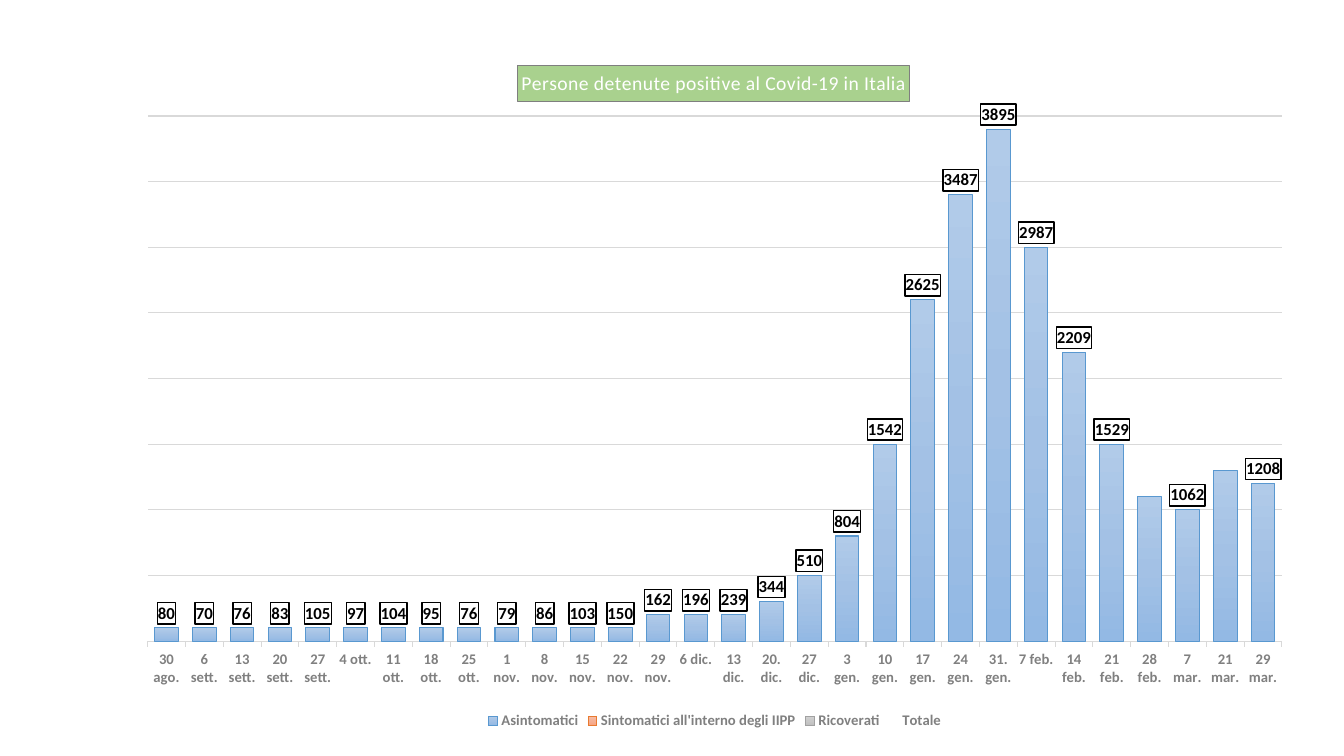
import pptx
import pptx.chart.data
import pptx.dml.color
import pptx.enum.chart
import pptx.oxml
import pptx.oxml.ns
import pptx.util

SLIDE_WIDTH, SLIDE_HEIGHT = 13.33, 7.5
FONT = "Calibri"
COLORS = {
    "text": "000000", "axis": "808080", "grid": "D9D9D9", "white": "FFFFFF",
    "title_fill": "A9D18E", "title_line": "7F7F7F",
}
TITLE = "Persone detenute positive al Covid-19 in Italia"
DATES = (
    "30 ago.|6 sett.|13 sett.|20 sett.|27 sett.|4 ott.|11 ott.|18 ott.|25 ott.|1 nov.|"
    "8 nov.|15 nov.|22 nov.|29 nov.|6 dic.|13 dic.|20. dic.|27 dic.|3 gen.|10 gen.|"
    "17 gen.|24 gen.|31. gen.|7 feb.|14 feb.|21 feb.|28 feb.|7 mar.|21 mar.|29 mar."
).split("|")
TOTALS = [80, 70, 76, 83, 105, 97, 104, 95, 76, 79, 86, 103, 150, 162, 196,
          239, 344, 510, 804, 1542, 2625, 3487, 3895, 2987, 2209, 1529, 1160,
          1062, 1341, 1208]
# Only the totals are labelled; the stacked parts are known to the nearest hundred
ASYMPTOMATIC = [100] * 13 + [200] * 3 + [
    300, 500, 800, 1500, 2600, 3400, 3900, 3000, 2200, 1500, 1100, 1000, 1300, 1200]
NEAR_ZERO = [0] * len(DATES)
UNLABELLED = [DATES.index("28 feb."), DATES.index("21 mar.")]

# name, values, gradient stops from top to bottom, outline
STACK = [
    ("Asintomatici", ASYMPTOMATIC, ("B1CBE9", "A3C1E5", "93B9E4"), "5998D0"),
    ("Sintomatici all'interno degli IIPP", NEAR_ZERO,
     ("F7BDA5", "F5B196", "F8A582"), "E87A30"),
    ("Ricoverati", NEAR_ZERO, ("D2D2D2", "C8C8C8", "C0C0C0"), "A1A1A1"),
]


def rgb(value):
    return pptx.dml.color.RGBColor.from_string(value)


def xml(markup):
    """Parse one element, declaring the drawing and chart namespaces."""
    tag, rest = markup[1:].split(">", 1)
    return pptx.oxml.parse_xml(f"<{tag} {pptx.oxml.ns.nsdecls('a', 'c')}>{rest}")


def style_font(font, size, color, bold=False):
    font.name, font.size, font.bold = FONT, pptx.util.Pt(size), bold
    font.color.rgb = rgb(color)


def write_text(frame, text, spacing=0, **style):
    frame.text = text
    run = frame.paragraphs[0].runs[0]
    style_font(run.font, **style)
    run.font._element.set("spc", str(spacing))


def style_line(line, color, width=0.75):
    line.color.rgb = rgb(color)
    line.width = pptx.util.Pt(width)


def manual_layout(inner=False, **shares):
    """Place a chart part by shares of the chart's size."""
    target = '<c:layoutTarget val="inner"/>' if inner else ""
    modes = '<c:xMode val="edge"/><c:yMode val="edge"/>'
    places = "".join(f'<c:{key} val="{share}"/>' for key, share in shares.items())
    return xml(f"<c:layout><c:manualLayout>{target}{modes}{places}"
               "</c:manualLayout></c:layout>")


def add_title(chart):
    title = chart.chart_title
    write_text(title.text_frame, TITLE, spacing=20, size=14, color=COLORS["white"])
    title.include_in_layout = False
    title.format.fill.solid()
    title.format.fill.fore_color.rgb = rgb(COLORS["title_fill"])
    style_line(title.format.line, COLORS["title_line"])
    for layout in title._element.findall(pptx.oxml.ns.qn("c:layout")):
        title._element.remove(layout)
    title._element.find(pptx.oxml.ns.qn("c:tx")).addnext(
        manual_layout(x=1 / 3, y=0.2 / SLIDE_HEIGHT))


def style_axes(chart):
    dates = chart.category_axis
    dates.major_tick_mark = pptx.enum.chart.XL_TICK_MARK.OUTSIDE
    style_font(dates.tick_labels.font, 10.5, COLORS["axis"], bold=True)
    style_line(dates.format.line, COLORS["grid"])
    counts = chart.value_axis
    counts.minimum_scale, counts.maximum_scale, counts.major_unit = 0, 4000, 500
    counts.has_major_gridlines = True
    style_line(counts.major_gridlines.format.line, COLORS["grid"])
    counts.visible = False


def style_stack_series(series, stops, outline):
    marks = "".join(f'<a:gs pos="{position * 50000}"><a:srgbClr val="{color}"/></a:gs>'
                    for position, color in enumerate(stops))
    series._element.get_or_add_spPr().insert(0, xml(
        f'<a:gradFill><a:gsLst>{marks}</a:gsLst>'
        '<a:lin ang="5400000" scaled="0"/></a:gradFill>'))
    style_line(series.format.line, outline)


def style_total_series(series):
    """Unfilled bars on top of the stack carry the boxed totals."""
    series.format.fill.background()
    series.format.line.fill.background()
    labels = series.data_labels
    labels.show_value = True
    labels.position = pptx.enum.chart.XL_LABEL_POSITION.INSIDE_BASE
    style_font(labels.font, 12, COLORS["text"], bold=True)
    element = labels._element
    element.find(pptx.oxml.ns.qn("c:txPr")).addprevious(xml(
        f'<c:spPr><a:solidFill><a:srgbClr val="{COLORS["white"]}"/></a:solidFill>'
        f'<a:ln w="12700"><a:solidFill><a:srgbClr val="{COLORS["text"]}"/>'
        '</a:solidFill></a:ln></c:spPr>'))
    for place, index in enumerate(UNLABELLED):
        element.insert(place, xml(
            f'<c:dLbl><c:idx val="{index}"/><c:delete val="1"/></c:dLbl>'))


def add_legend(chart):
    chart.has_legend = True
    chart.legend.position = pptx.enum.chart.XL_LEGEND_POSITION.BOTTOM
    chart.legend.include_in_layout = False
    style_font(chart.legend.font, 10.5, COLORS["axis"], bold=True)


def add_cases_chart(slide, left, top, width, height):
    data = pptx.chart.data.CategoryChartData()
    data.categories = DATES
    for name, values, _, _ in STACK:
        data.add_series(name, values)
    data.add_series("Totale", TOTALS)
    box = [pptx.util.Inches(share * side) for share, side in zip(
        (left, top, width, height), (SLIDE_WIDTH, SLIDE_HEIGHT) * 2)]
    chart = slide.shapes.add_chart(
        pptx.enum.chart.XL_CHART_TYPE.COLUMN_STACKED, *box, data).chart
    style_font(chart.font, 10, COLORS["text"])
    add_title(chart)
    style_axes(chart)
    add_legend(chart)

    # Columns
    plot = chart.plots[0]
    plot.gap_width, plot.overlap, plot.vary_by_categories = 60, 100, False
    *stack, totals = plot.series
    for series, (_, _, stops, outline) in zip(stack, STACK):
        style_stack_series(series, stops, outline)
    style_total_series(totals)

    # Plot area
    area = chart._chartSpace.chart.plotArea
    for layout in area.findall(pptx.oxml.ns.qn("c:layout")):
        area.remove(layout)
    area.insert(0, manual_layout(inner=True, x=0.02, y=0.1, w=0.96, h=0.765))


def main():
    presentation = pptx.Presentation()
    presentation.slide_width = pptx.util.Inches(SLIDE_WIDTH)
    presentation.slide_height = pptx.util.Inches(SLIDE_HEIGHT)
    slide = presentation.slides.add_slide(presentation.slide_layouts[6])
    add_cases_chart(slide, left=1.23 / SLIDE_WIDTH, top=0.47 / SLIDE_HEIGHT,
                    width=11.72 / SLIDE_WIDTH, height=6.81 / SLIDE_HEIGHT)
    presentation.save("out.pptx")


if __name__ == "__main__":
    main()
